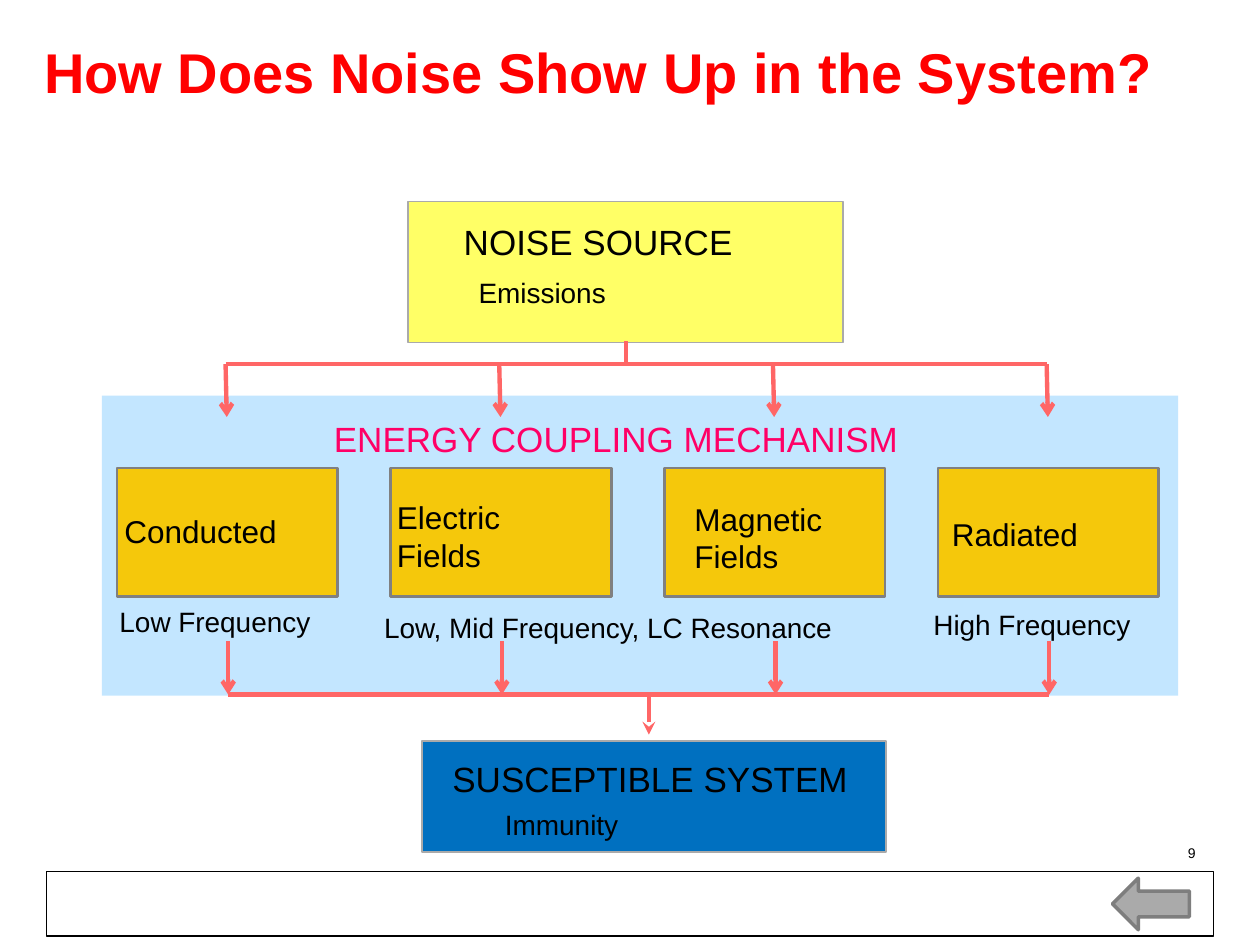
from lxml import etree
from pptx import Presentation
from pptx.dml.color import RGBColor
from pptx.enum.shapes import MSO_CONNECTOR, MSO_SHAPE
from pptx.enum.text import MSO_ANCHOR, MSO_AUTO_SIZE, PP_ALIGN
from pptx.oxml.ns import qn
from pptx.util import Pt

RECTANGLE = MSO_SHAPE.RECTANGLE
LEFT_ARROW = MSO_SHAPE.LEFT_ARROW
STRAIGHT = MSO_CONNECTOR.STRAIGHT
MIDDLE = MSO_ANCHOR.MIDDLE
NO_FIT = MSO_AUTO_SIZE.NONE
LEFT, RIGHT = PP_ALIGN.LEFT, PP_ALIGN.RIGHT

FONT = "Arial"
BLACK = RGBColor(0x00, 0x00, 0x00)
RED = RGBColor(0xFF, 0x00, 0x00)
PINK = RGBColor(0xFF, 0x00, 0x66)
CORAL = RGBColor(0xFF, 0x66, 0x66)
YELLOW = RGBColor(0xFF, 0xFF, 0x66)
GOLD = RGBColor(0xF5, 0xC8, 0x0B)
BLUE = RGBColor(0x00, 0x70, 0xC0)
SKY = RGBColor(0x85, 0xCE, 0xFF)
SILVER = RGBColor(0xAA, 0xAA, 0xAA)
GRAY = RGBColor(0x80, 0x80, 0x80)
DARK_GRAY = RGBColor(0x7E, 0x7E, 0x7E)

CARD_PITCH = 156.4
CARD_WIDTH, CARD_HEIGHT = 126, 73.4
MECHANISMS = [
    ("Conducted", -2.9, 21.4, 123.8),
    ("Electric Fields", -3.6, 13.6, 123.8),
    ("Magnetic Fields", 10, 14.4, 98.6),
    ("Radiated", 0.7, 23, 123.8),
]
FREQUENCIES = [
    ("Low Frequency", 2.9, 115.9, 146.9),
    ("Low, Mid Frequency, LC Resonance", 154.1, 119.5, 293),
    ("High Frequency", 468, 117.3, 146.9),
]


def add_block(slide, kind, left, top, width, height, fill=None, line=None, weight=1):
    block = slide.shapes.add_shape(kind, Pt(left), Pt(top), Pt(width), Pt(height))
    block.shadow.inherit = False
    if fill is None:
        block.fill.background()
    else:
        block.fill.solid()
        block.fill.fore_color.rgb = fill
    if line is None:
        block.line.fill.background()
    else:
        block.line.color.rgb = line
        block.line.width = Pt(weight)
    return block


def add_label(slide, text, left, top, width, height, size, color=BLACK,
              align=LEFT, inset=(7.2, 3.6)):
    label = slide.shapes.add_textbox(Pt(left), Pt(top), Pt(width), Pt(height))
    frame = label.text_frame
    frame.word_wrap = True
    frame.margin_left = frame.margin_right = Pt(inset[0])
    frame.margin_top = frame.margin_bottom = Pt(inset[1])
    paragraph = frame.paragraphs[0]
    paragraph.text = text
    paragraph.alignment = align
    paragraph.font.name = FONT
    paragraph.font.size = Pt(size)
    paragraph.font.color.rgb = color


def add_heading(slide, text, left, top, width, color=BLACK):
    add_label(slide, text, left, top, width, 32.4, 20, color, inset=(7.9, 4.3))


def add_flow(slide, x1, y1, x2, y2, arrowhead=None):
    flow = slide.shapes.add_connector(STRAIGHT, Pt(x1), Pt(y1), Pt(x2), Pt(y2))
    flow.line.color.rgb = CORAL
    flow.line.width = Pt(2.5)
    if arrowhead:
        etree.SubElement(flow.line._get_or_add_ln(), qn("a:tailEnd"), type=arrowhead)
    etree.SubElement(flow._element.spPr, qn("a:effectLst"))


def add_title(slide, left, top, width, height):
    title = slide.shapes.title
    title.left, title.top = Pt(left), Pt(top)
    title.width, title.height = Pt(width), Pt(height)
    frame = title.text_frame
    frame.auto_size = NO_FIT
    frame.vertical_anchor = MIDDLE
    paragraph = frame.paragraphs[0]
    paragraph.text = "How Does Noise Show Up in the System?"
    paragraph.alignment = LEFT
    paragraph.line_spacing = 0.85
    paragraph.font.name = FONT
    paragraph.font.size = Pt(32)
    paragraph.font.bold = True
    paragraph.font.color.rgb = RED


def add_noise_source(slide, left, top, width, height):
    add_block(slide, RECTANGLE, left, top, width, height, YELLOW, SILVER)
    add_heading(slide, "NOISE SOURCE", left + 23.8, top + 6.5, 201.6)
    add_label(slide, "Emissions", left + 33.1, top + 38.9, 176.4, 24.5, 16)


def add_susceptible_system(slide, left, top, width, height):
    add_block(slide, RECTANGLE, left, top, width, height, BLUE, SILVER)
    add_heading(slide, "SUSCEPTIBLE SYSTEM", left + 9.4, top + 5, 252)
    add_label(slide, "Immunity", left + 40.3, top + 34.6, 175.7, 24.5, 16)


def add_coupling(slide, left, top, width, height):
    band = add_block(slide, RECTANGLE, left, top, width, height, SKY)
    tint = band._element.spPr.find(qn("a:solidFill"))[0]
    etree.SubElement(tint, qn("a:alpha"), val="49000")
    add_heading(slide, "ENERGY COUPLING MECHANISM", left + 124.6, top + 7.9, 360, PINK)

    cards_left, cards_top = left + 8.6, top + 41.4
    centers = []
    for index, (name, dx, dy, label_width) in enumerate(MECHANISMS):
        card_left = cards_left + index * CARD_PITCH
        centers.append(card_left + CARD_WIDTH / 2)
        add_block(slide, RECTANGLE, card_left, cards_top, CARD_WIDTH, CARD_HEIGHT,
                  GOLD, GRAY, 1.5)
        add_label(slide, name, card_left + dx, cards_top + dy, label_width,
                  46.8 if " " in name else 26.6, 18)

    inlet, outlet = top - 18, top + height - 0.6
    add_flow(slide, left + 299.5, top - 31, left + 299.5, inlet)
    add_flow(slide, centers[0] - 1, inlet, centers[-1] - 1, inlet)
    add_flow(slide, centers[0] + 0.5, outlet, centers[-1] + 0.5, outlet)
    for center in centers:
        add_flow(slide, center - 1, inlet, center - 0.3, top + 12.2, "arrow")
        add_flow(slide, center + 0.5, top + 140.4, center + 0.5, outlet, "arrow")
    add_flow(slide, left + 312.5, outlet, left + 312.5, top + 193.7, "stealth")

    for text, dx, dy, label_width in FREQUENCIES:
        add_label(slide, text, left + dx, top + dy, label_width, 24.5, 16)


def add_footer(slide, left, top, width, height):
    add_block(slide, RECTANGLE, left, top, width, height, line=BLACK, weight=0.75)
    add_label(slide, "9", left + 496, top - 19.4, 167.8, 16.6, 8, align=RIGHT)
    add_block(slide, LEFT_ARROW, left + 609.1, top + 3.6, 43.9, 29.5,
              SILVER, DARK_GRAY, 2)


def main():
    deck = Presentation()
    deck.slide_width, deck.slide_height = Pt(720), Pt(540)
    slide = deck.slides.add_slide(deck.slide_layouts[5])
    add_footer(slide, 26.6, 498.2, 666.7, 36.7)
    add_title(slide, 18, 11.5, 666, 64.1)
    add_noise_source(slide, 233.3, 115.2, 248.4, 80.6)
    add_susceptible_system(slide, 241.2, 423.4, 265, 63.4)
    add_coupling(slide, 58.3, 226.1, 614.9, 171.4)
    deck.save("out.pptx")


if __name__ == "__main__":
    main()
